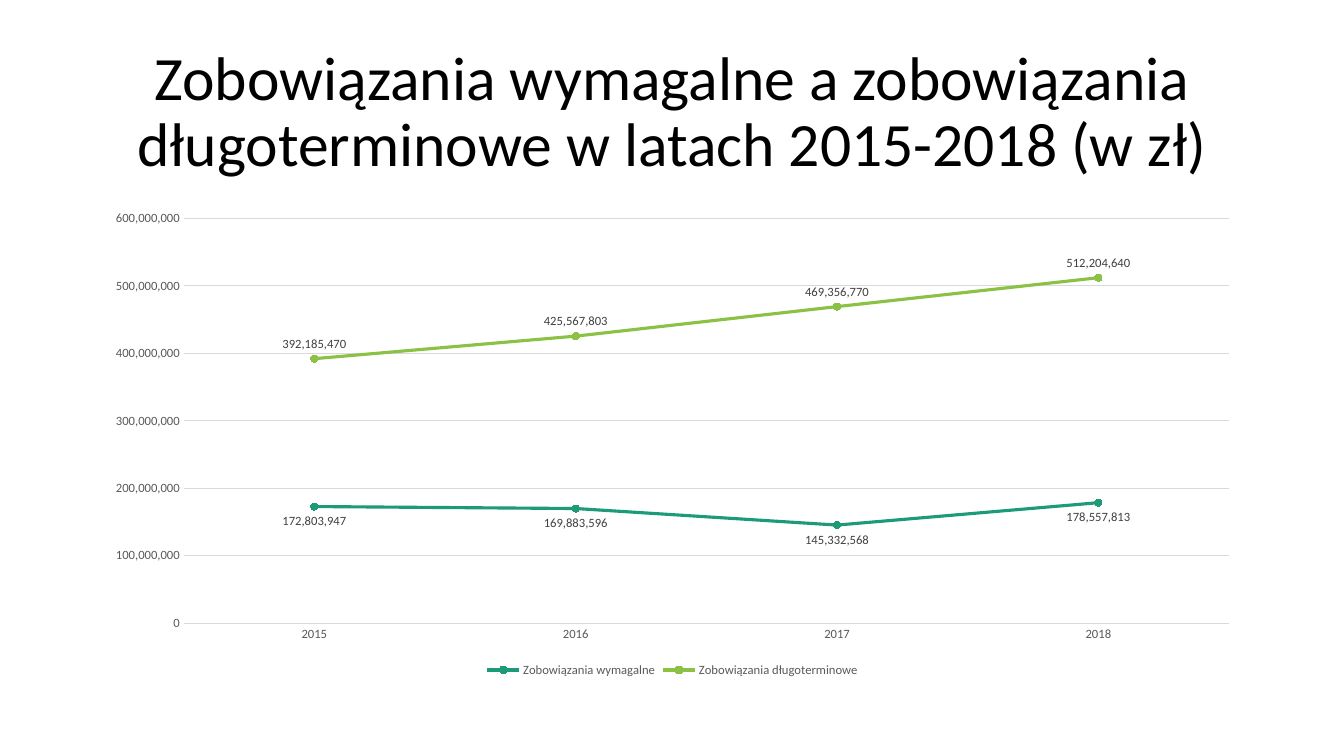
import pptx
import pptx.util
import pptx.chart.data
import pptx.dml.color
import pptx.enum.chart
import pptx.enum.text
from pptx.util import Inches

FONT = "Calibri"
GRAY, GRID, LABEL = "595959", "D9D9D9", "404040"
YEARS = ["2015", "2016", "2017", "2018"]
POSITION = pptx.enum.chart.XL_LABEL_POSITION
SERIES = [
    ("Zobowiązania wymagalne", "1D9A78", POSITION.BELOW,
     [172803947, 169883596, 145332568, 178557813]),
    ("Zobowiązania długoterminowe", "8BC145", POSITION.ABOVE,
     [392185470, 425567803, 469356770, 512204640]),
]


def rgb(value):
    return pptx.dml.color.RGBColor.from_string(value)


def format_font(font, size, color):
    font.name = FONT
    font.size = pptx.util.Pt(size)
    font.bold = False
    font.color.rgb = rgb(color)


def format_line(line, color, width):
    line.color.rgb = rgb(color)
    line.width = pptx.util.Pt(width)


def set_text(tf, text, *, size, color, align, anchor, spacing):
    tf.word_wrap = True
    tf.vertical_anchor = anchor
    p = tf.paragraphs[0]
    p.alignment = align
    p.line_spacing = spacing
    r = p.add_run()
    r.text = text
    format_font(r.font, size, color)


def add_title(s, text):
    sp = s.shapes.title
    sp.left, sp.top = Inches(0.92), Inches(0.4)
    sp.width, sp.height = Inches(11.5), Inches(1.45)
    set_text(sp.text_frame, text, size=44, color="000000",
             align=pptx.enum.text.PP_ALIGN.CENTER,
             anchor=pptx.enum.text.MSO_ANCHOR.MIDDLE, spacing=0.9)


def format_axis(axis):
    axis.major_tick_mark = pptx.enum.chart.XL_TICK_MARK.NONE
    axis.minor_tick_mark = pptx.enum.chart.XL_TICK_MARK.NONE
    format_font(axis.tick_labels.font, 9, GRAY)


def format_series(series, color, position):
    series.smooth = False
    format_line(series.format.line, color, 2.25)
    marker = series.marker
    marker.style = pptx.enum.chart.XL_MARKER_STYLE.CIRCLE
    marker.size = 5
    marker.format.fill.solid()
    marker.format.fill.fore_color.rgb = rgb(color)
    format_line(marker.format.line, color, 0.75)
    labels = series.data_labels
    labels.show_value = True
    labels.position = position
    labels.number_format = "#,##0"
    labels.number_format_is_linked = False
    format_font(labels.font, 9, LABEL)


def add_line_chart(s):
    data = pptx.chart.data.CategoryChartData(number_format="#,##0")
    data.categories = YEARS
    for name, _, _, values in SERIES:
        data.add_series(name, values)
    chart = s.shapes.add_chart(
        pptx.enum.chart.XL_CHART_TYPE.LINE_MARKERS,
        Inches(0.92), Inches(2), Inches(11.5), Inches(4.76), data).chart
    format_font(chart.font, 10, "000000")
    chart.has_title = False
    chart.has_legend = True
    chart.legend.position = pptx.enum.chart.XL_LEGEND_POSITION.BOTTOM
    chart.legend.include_in_layout = False
    format_font(chart.legend.font, 9, GRAY)

    years, amounts = chart.category_axis, chart.value_axis
    format_axis(years)
    format_line(years.format.line, GRID, 0.75)
    format_axis(amounts)
    amounts.format.line.fill.background()
    amounts.minimum_scale, amounts.maximum_scale = 0, 600000000
    amounts.major_unit = 100000000
    amounts.tick_labels.number_format = "#,##0"
    amounts.tick_labels.number_format_is_linked = False
    format_line(amounts.major_gridlines.format.line, GRID, 0.75)

    plot = chart.plots[0]
    plot.vary_by_categories = False
    for series, (_, color, position, _) in zip(plot.series, SERIES):
        format_series(series, color, position)


def main():
    prs = pptx.Presentation()
    prs.slide_width, prs.slide_height = Inches(13.33), Inches(7.5)
    s = prs.slides.add_slide(prs.slide_layouts[5])
    add_title(s, "Zobowiązania wymagalne a zobowiązania "
                 "długoterminowe w latach 2015-2018 (w zł)")
    add_line_chart(s)
    prs.save("out.pptx")


if __name__ == "__main__":
    main()
